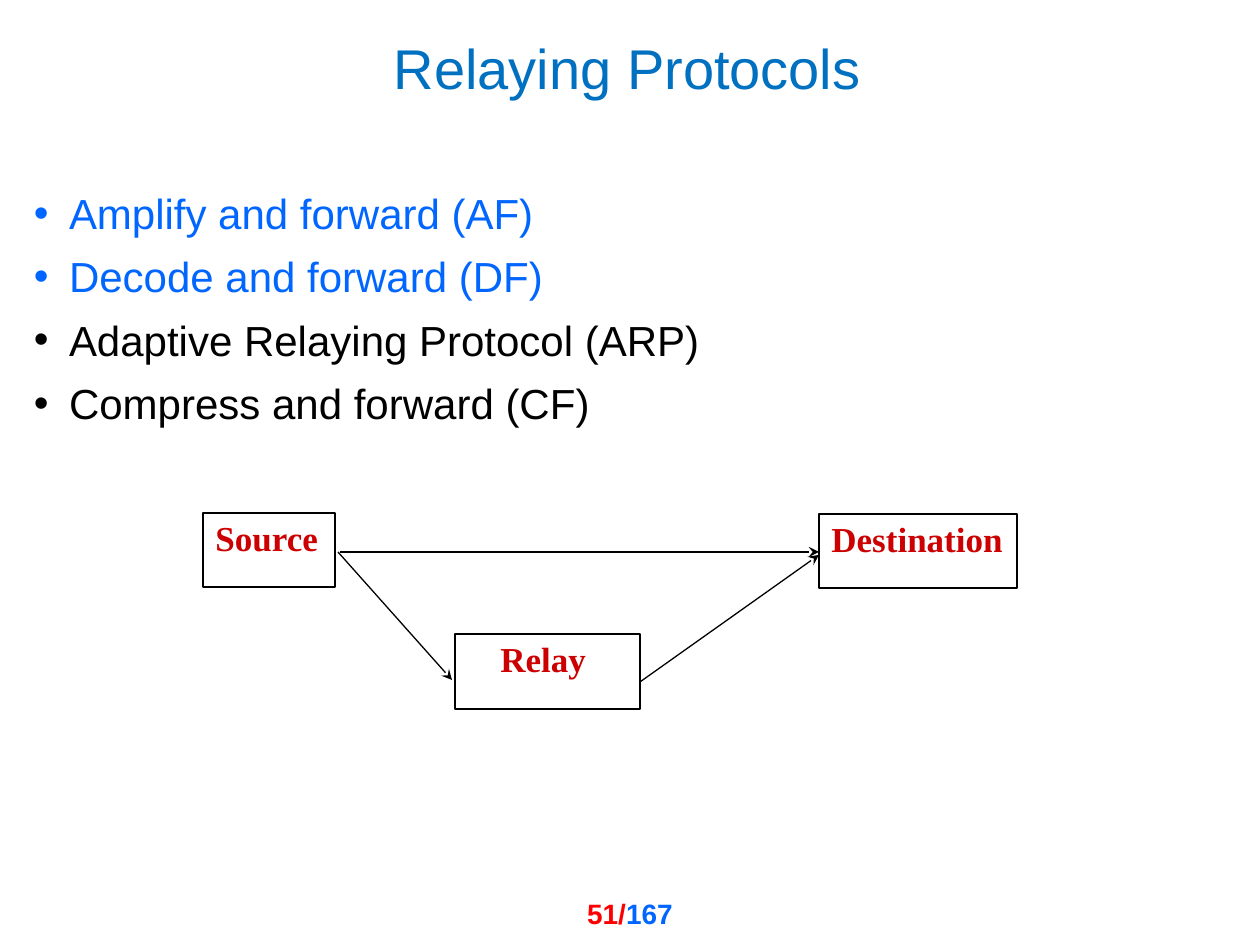
from lxml.etree import SubElement
from pptx import Presentation
from pptx.dml.color import RGBColor
from pptx.enum.shapes import MSO_CONNECTOR, MSO_SHAPE
from pptx.enum.text import MSO_ANCHOR, PP_ALIGN
from pptx.oxml.ns import qn
from pptx.util import Emu, Pt

PX = 914400 // 126
BLACK = RGBColor(0, 0, 0)
WHITE = RGBColor(0xFF, 0xFF, 0xFF)
TITLE_BLUE = RGBColor(0x00, 0x70, 0xC0)
BLUE = RGBColor(0x00, 0x66, 0xFF)
RED = RGBColor(0xFF, 0, 0)
NODE_RED = RGBColor(0xCC, 0, 0)


def px(*lengths):
    return [Emu(length * PX) for length in lengths]


def set_font(font, name, size, color, bold=False):
    font.name, font.size, font.bold = name, Pt(size), bold
    font.color.rgb = color


prs = Presentation()
prs.slide_width, prs.slide_height = px(1260, 945)
slide = prs.slides.add_slide(prs.slide_layouts[6])
shapes = slide.shapes

# Page number
page = shapes.add_textbox(*px(501, 890, 184, 39)).text_frame
page.word_wrap = True
page_line = page.paragraphs[0]
page_line.alignment = PP_ALIGN.RIGHT
for text, color in (("51/", RED), ("167", BLUE)):
    part = page_line.add_run()
    part.text = text
    set_font(part.font, "Arial", 16, color, bold=True)

# Title and protocol list
title = shapes.add_textbox(*px(34, 29, 1187, 87)).text_frame
protocols = shapes.add_textbox(*px(34, 185, 1019, 484)).text_frame
for frame in (title, protocols):
    frame.word_wrap = True
    frame.margin_left = frame.margin_right = 0
    frame.margin_top = frame.margin_bottom = 0

title.vertical_anchor = MSO_ANCHOR.MIDDLE
heading = title.paragraphs[0]
heading.text = "Relaying Protocols"
heading.alignment = PP_ALIGN.CENTER
heading.line_spacing = 0.85
set_font(heading.font, "Arial", 32, TITLE_BLUE)

PROTOCOLS = [
    ("Amplify and forward (AF)", BLUE),
    ("Decode and forward (DF)", BLUE),
    ("Adaptive Relaying Protocol (ARP)", BLACK),
    ("Compress and forward (CF)", BLACK),
]
for i, (text, color) in enumerate(PROTOCOLS):
    item = protocols.add_paragraph() if i else protocols.paragraphs[0]
    item.text = text
    item.line_spacing = 1.05
    item.space_before = Pt(6 if i else 0)
    props = item._p.get_or_add_pPr()
    indent = 35 * PX
    props.set("marL", str(indent))
    props.set("indent", str(-indent))
    SubElement(props, qn("a:buFont"), typeface="Arial")
    SubElement(props, qn("a:buChar"), char="•")
    set_font(item.font, "Arial", 24, color)

# Relay network
NODES = [
    ("Source", (203, 513, 132, 74), PP_ALIGN.LEFT),
    ("Destination", (819, 514, 198, 74), PP_ALIGN.LEFT),
    ("Relay ", (455, 634, 185, 75), PP_ALIGN.CENTER),
]
for text, bounds, alignment in NODES:
    node = shapes.add_shape(MSO_SHAPE.RECTANGLE, *px(*bounds))
    node.shadow.inherit = False
    node.fill.solid()
    node.fill.fore_color.rgb = WHITE
    node.line.color.rgb = BLACK
    node.line.width = Pt(0.75)
    node.text_frame.vertical_anchor = MSO_ANCHOR.TOP
    label = node.text_frame.paragraphs[0]
    label.text = text
    label.alignment = alignment
    label.line_spacing = 0.95
    set_font(label.font, "Times New Roman", 20, NODE_RED, bold=True)

LINKS = [
    (340, 552, 819, 552),
    (338, 552, 452, 680),
    (640, 682, 819, 555),
]
for ends in LINKS:
    link = shapes.add_connector(MSO_CONNECTOR.STRAIGHT, *px(*ends))
    link.line.color.rgb = BLACK
    link.line.width = Pt(0.75)
    SubElement(link.line._get_or_add_ln(), qn("a:tailEnd"), type="stealth")
    SubElement(link._element.spPr, qn("a:effectLst"))

prs.save("out.pptx")
